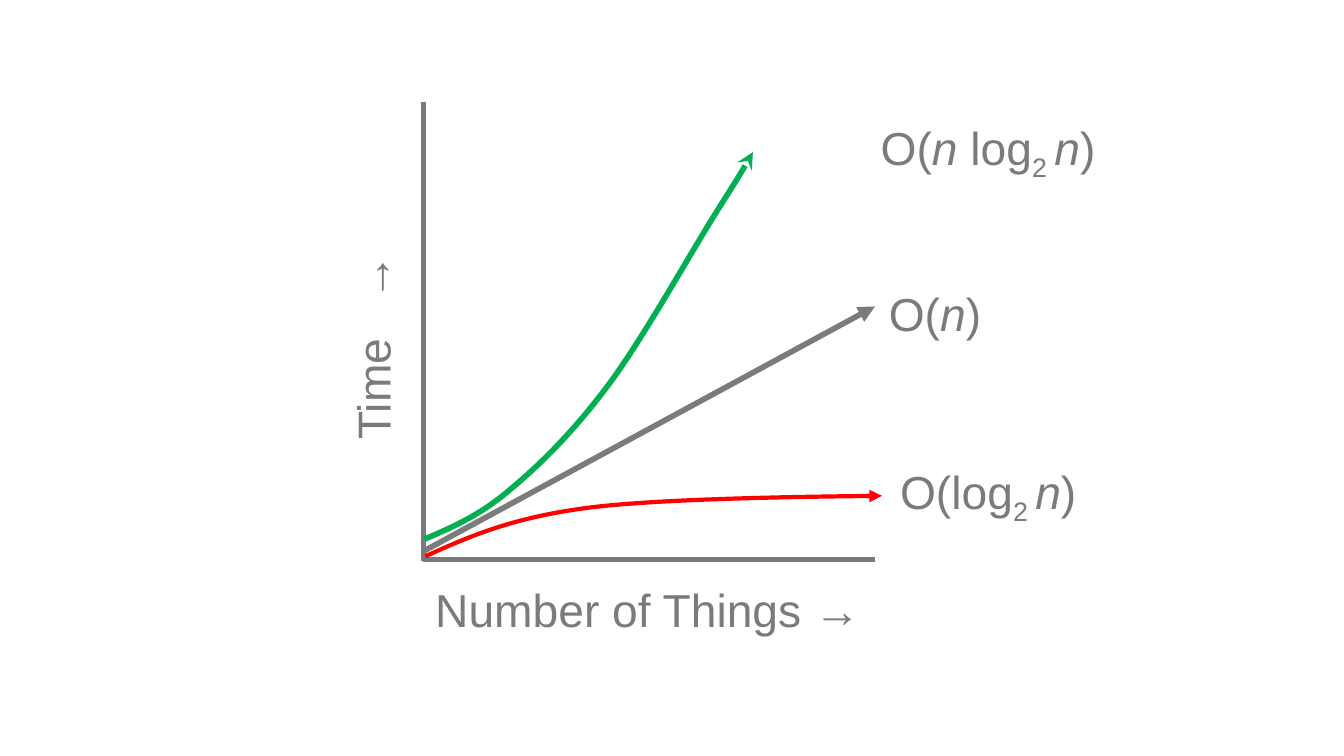
import pptx
import pptx.dml.color
import pptx.enum.shapes
import pptx.enum.text
import pptx.oxml.ns
import pptx.oxml.xmlchemy
import pptx.util

Pt = pptx.util.Pt
qn = pptx.oxml.ns.qn
OxmlElement = pptx.oxml.xmlchemy.OxmlElement
GREY = pptx.dml.color.RGBColor(0x7B, 0x7B, 0x7B)
RED = pptx.dml.color.RGBColor(0xFF, 0x00, 0x00)
GREEN = pptx.dml.color.RGBColor(0x00, 0xB0, 0x50)


def add_span(para, text, italic=False, baseline=0, spacing=0):
    span = para.add_run()
    span.text = text
    span.font.name = "Arial"
    span.font.size = Pt(33)
    span.font.italic = italic
    span.font.color.rgb = GREY
    if baseline:
        span._r.get_or_add_rPr().set("baseline", str(baseline * 1000))
    if spacing:
        span._r.get_or_add_rPr().set("spc", str(spacing * 100))


def style_line(shape, color, width, arrow=None):
    shape.line.color.rgb = color
    shape.line.width = Pt(width)
    properties = shape._element.spPr
    if arrow:
        tail = OxmlElement("a:tailEnd")
        tail.set("type", arrow)
        properties.find(qn("a:ln")).append(tail)
    properties.append(OxmlElement("a:effectLst"))


deck = pptx.Presentation()
deck.slide_width = Pt(960)
deck.slide_height = Pt(540)
page = deck.slides.add_slide(deck.slide_layouts[6])

straight_lines = [
    (302.4, 72.7, 302.4, 401, None),
    (302.4, 399.6, 625, 399.6, None),
    (302.4, 393.8, 625, 218.9, "triangle"),
]
for left, top, right, bottom, arrow in straight_lines:
    line = page.shapes.add_connector(
        pptx.enum.shapes.MSO_CONNECTOR.STRAIGHT, Pt(left), Pt(top), Pt(right), Pt(bottom))
    style_line(line, GREY, 4, arrow)

log_curve = [
    (303.8, 397.4), (334.1, 383.8), (364.3, 370.1), (419, 362.9),
    (473, 355.7), (630, 354.2), (630, 354.2),
]
n_log_curve = [
    (303.1, 385.2), (323.3, 376.6), (343.4, 367.9), (365, 349.2),
    (387.4, 330.5), (411.1, 306.7), (435.6, 273.6),
    (460.1, 240.5), (494.6, 178.6), (511.9, 151.2),
    (529.2, 123.8), (533.5, 116.6), (537.8, 108.7),
]
curves = [(log_curve, RED, 3, "triangle"), (n_log_curve, GREEN, 4, "stealth")]
for points, color, width, arrow in curves:
    start, *controls = [(Pt(x), Pt(y)) for x, y in points]
    builder = page.shapes.build_freeform(*start)
    builder.add_line_segments(controls, close=False)
    curve = builder.convert_to_shape()
    curve.fill.background()
    style_line(curve, color, width, arrow)
    segments = list(curve._element.iter(qn("a:lnTo")))
    for index in range(0, len(segments), 3):
        bezier = OxmlElement("a:cubicBezTo")
        segments[index].addprevious(bezier)
        for segment in segments[index:index + 3]:
            bezier.append(segment[0])
            segment.getparent().remove(segment)

variable = ("n", {"italic": True})
log_base = ("2 ", {"baseline": -25})
closing = (")", {})
labels = [
    (622, 82, 175, 0, [("O(", {}), variable, (" log", {}), log_base, variable, closing]),
    (627.8, 200.2, 95.8, 0, [("O(", {}), variable, closing]),
    (635.8, 327.6, 166.3, 0, [("O(log", {}), log_base, variable, closing]),
    (303.8, 411.8, 321.1, 0, [("Number of Things →", {})]),
    (192.2, 223.2, 148.3, 270, [("Time", {}), (" ", {"spacing": 18}), ("→", {})]),
]
for left, top, width, rotation, spans in labels:
    box = page.shapes.add_textbox(Pt(left), Pt(top), Pt(width), Pt(47.5))
    box.rotation = rotation
    box.text_frame.word_wrap = False
    box.text_frame.auto_size = pptx.enum.text.MSO_AUTO_SIZE.SHAPE_TO_FIT_TEXT
    para = box.text_frame.paragraphs[0]
    for text, look in spans:
        add_span(para, text, **look)

deck.save("out.pptx")
